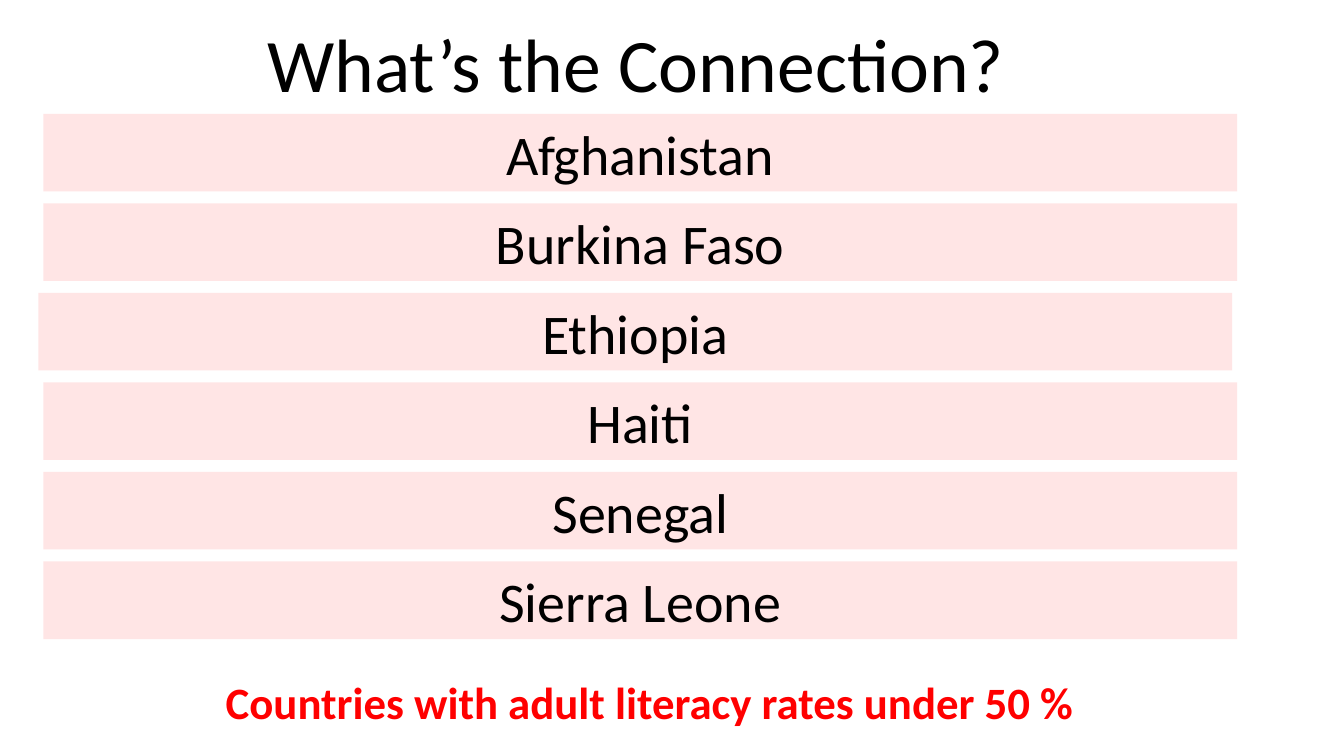
"""Build the "What's the Connection?" slide: six country bars and the answer below."""
from pptx import Presentation
from pptx.dml.color import RGBColor
from pptx.enum.shapes import MSO_SHAPE
from pptx.enum.text import MSO_ANCHOR, MSO_AUTO_SIZE, PP_ALIGN
from pptx.util import Inches, Pt

RECT = MSO_SHAPE.RECTANGLE
TOP, MIDDLE = MSO_ANCHOR.TOP, MSO_ANCHOR.MIDDLE
LEFT, CENTER = PP_ALIGN.LEFT, PP_ALIGN.CENTER
GROW = MSO_AUTO_SIZE.SHAPE_TO_FIT_TEXT

THEME = {
    "bar": RGBColor(0xFF, 0xE5, 0xE5),
    "title": {"size": Pt(54), "bold": False, "color": RGBColor(0, 0, 0)},
    "country": {"size": Pt(40), "bold": False, "color": RGBColor(0, 0, 0)},
    "answer": {"size": Pt(32), "bold": True, "color": RGBColor(0xFF, 0, 0)},
}
COUNTRIES = ["Afghanistan", "Burkina Faso", "Ethiopia", "Haiti", "Senegal", "Sierra Leone"]
BAR_TOP, BAR_PITCH = 1.13, 0.888


def write(sp, text, style, align, anchor, wrap):
    """Put one formatted paragraph into a shape."""
    tf = sp.text_frame
    frame = {"word_wrap": wrap, "auto_size": GROW, "vertical_anchor": anchor,
             "margin_left": Inches(0.1), "margin_right": Inches(0.1),
             "margin_top": Inches(0.05), "margin_bottom": Inches(0.05)}
    for name, value in frame.items():
        setattr(tf, name, value)
    p = tf.paragraphs[0]
    p.alignment = align
    r = p.add_run()
    r.text = text
    r.font.name = "Calibri"
    r.font.size = THEME[style]["size"]
    r.font.bold = THEME[style]["bold"]
    r.font.color.rgb = THEME[style]["color"]


prs = Presentation()
prs.slide_width, prs.slide_height = Inches(13.33), Inches(7.5)
s = prs.slides.add_slide(prs.slide_layouts[5])

title = s.shapes.title
title.left, title.top = Inches(2.55), Inches(0.12)
title.width, title.height = Inches(7.59), Inches(1.01)
write(title, "What’s the Connection?", "title", LEFT, TOP, False)

for i, country in enumerate(COUNTRIES):
    left = 0.38 if country == "Ethiopia" else 0.43
    sp = s.shapes.add_shape(RECT, Inches(left), Inches(BAR_TOP + i * BAR_PITCH),
                            Inches(11.84), Inches(0.77))
    sp.shadow.inherit = False
    sp.fill.solid()
    sp.fill.fore_color.rgb = THEME["bar"]
    sp.line.fill.background()
    write(sp, country, "country", CENTER, MIDDLE, True)

answer = s.shapes.add_textbox(Inches(2.14), Inches(6.64), Inches(8.68), Inches(0.64))
write(answer, "Countries with adult literacy rates under 50 %", "answer", LEFT, TOP, False)

prs.save("out.pptx")
